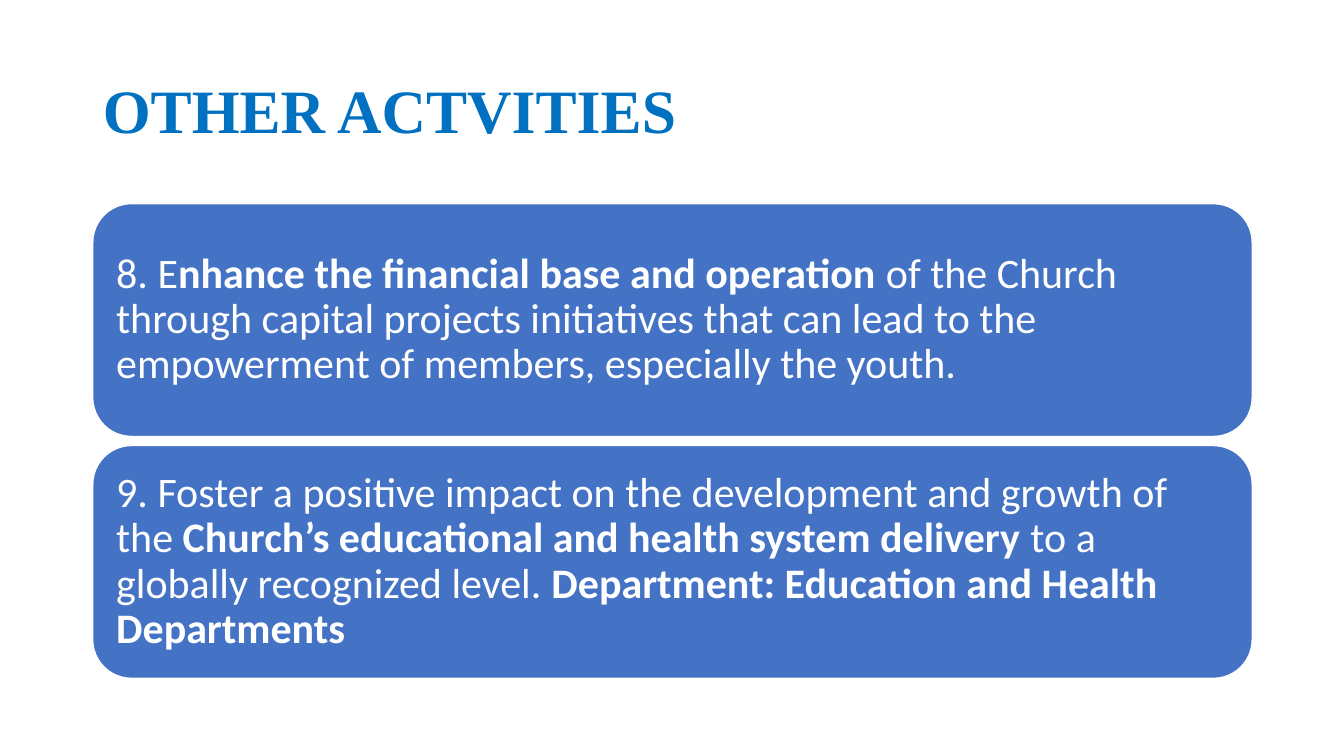
from pptx import Presentation
from pptx.dml.color import RGBColor
from pptx.enum.shapes import MSO_SHAPE
from pptx.enum.text import MSO_ANCHOR, PP_ALIGN
from pptx.util import Inches, Pt

ROUNDED = MSO_SHAPE.ROUNDED_RECTANGLE
MIDDLE = MSO_ANCHOR.MIDDLE
LEFT = PP_ALIGN.LEFT
TITLE_BLUE = RGBColor(0x00, 0x70, 0xC0)
CARD_BLUE = RGBColor(0x44, 0x72, 0xC4)
WHITE = RGBColor(0xFF, 0xFF, 0xFF)

MARGIN, CONTENT_WIDTH = 0.92, 11.5
CARDS_TOP, CARD_HEIGHT, CARD_STEP = 2.02, 2.31, 2.4
TITLE_ONLY = 5

ACTIVITIES = [
    [
        ("8. E", False),
        ("nhance the financial base and operation", True),
        (" of the Church through capital projects initiatives that can lead "
         "to the empowerment of members, especially the youth.\u00a0", False),
    ],
    [
        ("9. Foster a positive impact on the development and growth of the ", False),
        ("Church’s educational and health system delivery", True),
        (" to a globally recognized level. ", False),
        ("Department: Education and Health Departments\u00a0", True),
    ],
]


def format_paragraph(para, font_name, size, color):
    """Set the shared paragraph layout and its font."""
    para.alignment = LEFT
    para.line_spacing = 0.9
    para.font.name = font_name
    para.font.size = Pt(size)
    para.font.color.rgb = color


def set_title(page, text):
    """Place and format the title placeholder."""
    title = page.shapes.title
    title.left, title.top = Inches(MARGIN), Inches(0.4)
    title.width, title.height = Inches(CONTENT_WIDTH), Inches(1.45)
    title.text_frame.text = text
    title.text_frame.vertical_anchor = MIDDLE
    para = title.text_frame.paragraphs[0]
    format_paragraph(para, "Times New Roman", 44, TITLE_BLUE)
    para.font.bold = True


def add_card(page, row, spans):
    """Add one rounded card with mixed regular and bold text."""
    card = page.shapes.add_shape(
        ROUNDED, Inches(MARGIN), Inches(CARDS_TOP + row * CARD_STEP),
        Inches(CONTENT_WIDTH), Inches(CARD_HEIGHT))
    card.shadow.inherit = False
    card.fill.solid()
    card.fill.fore_color.rgb = CARD_BLUE
    card.line.color.rgb = WHITE
    card.line.width = Pt(1)
    frame = card.text_frame
    frame.word_wrap = True
    frame.vertical_anchor = MIDDLE
    frame.margin_left = frame.margin_right = Inches(0.12)
    frame.margin_top = frame.margin_bottom = Inches(0.12)
    para = frame.paragraphs[0]
    format_paragraph(para, "Calibri", 30, WHITE)
    for text, bold in spans:
        span = para.add_run()
        span.text = text
        span.font.bold = bold


def main():
    """Build the slide and save the deck."""
    deck = Presentation()
    deck.slide_width, deck.slide_height = Inches(13.33), Inches(7.5)
    page = deck.slides.add_slide(deck.slide_layouts[TITLE_ONLY])
    set_title(page, "OTHER ACTVITIES")
    for row, spans in enumerate(ACTIVITIES):
        add_card(page, row, spans)
    deck.save("out.pptx")


if __name__ == "__main__":
    main()
